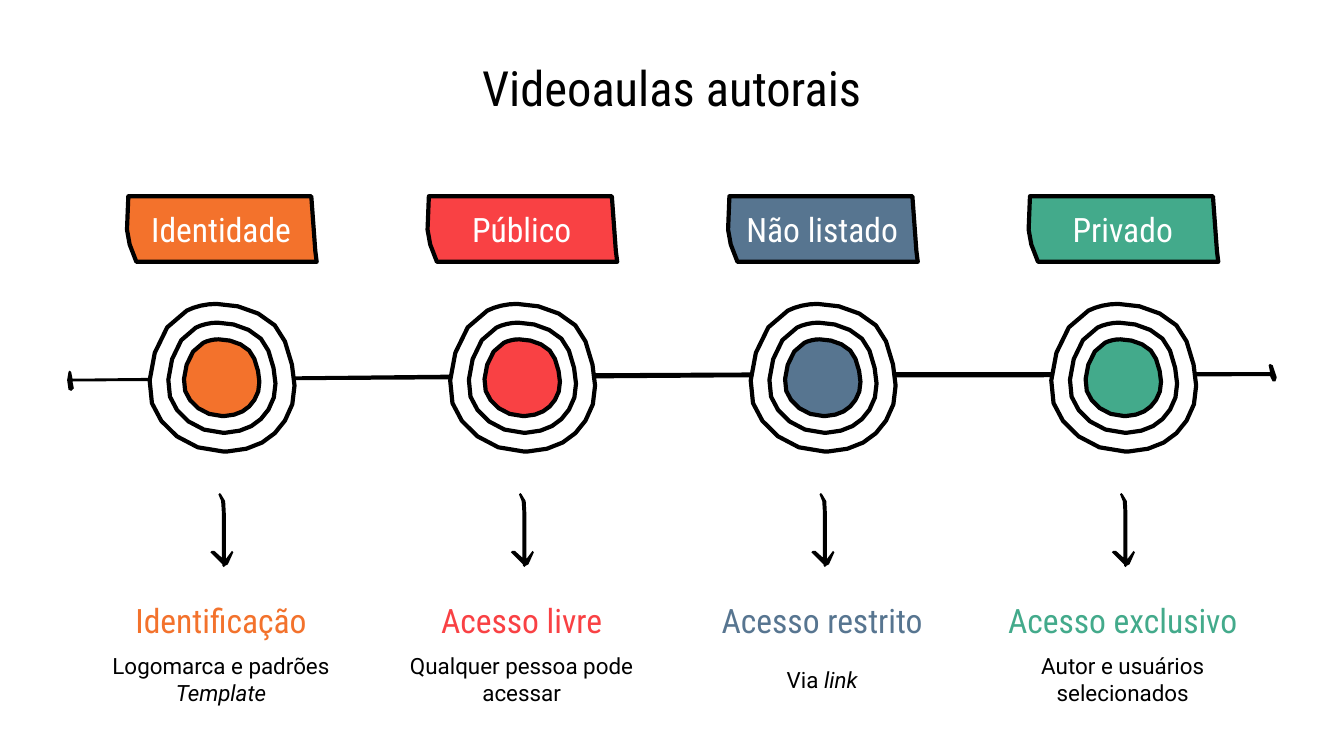
from dataclasses import dataclass
from typing import NamedTuple

import pptx
import pptx.dml.color
import pptx.enum.text
import pptx.shapes.shapetree
import pptx.util

Cm = pptx.util.Cm
RGB = pptx.dml.color.RGBColor.from_string
Anchor = pptx.enum.text.MSO_ANCHOR


@dataclass(frozen=True)
class Theme:
    black: str = "000000"
    white: str = "FFFFFF"
    orange: str = "F3722C"
    red: str = "F94144"
    blue: str = "577590"
    green: str = "43AA8B"
    heading_font: str = "Roboto Condensed"
    body_font: str = "Roboto"
    title_size: float = 26
    heading_size: float = 18
    body_size: float = 12
    line_width: float = 2.25


class Box(NamedTuple):
    """Position and size in centimetres."""
    left: float
    top: float
    width: float
    height: float


class Run(NamedTuple):
    text: str
    italic: bool = False


class Outline(NamedTuple):
    """Closed outline; a segment is a line (x, y) or a curve (two controls, end)."""
    width: float
    height: float
    start: tuple[float, float]
    segments: list[tuple[float, ...]]


@dataclass(frozen=True)
class Stage:
    label: str
    color: str
    heading: str
    body: list[list[Run]]


THEME = Theme()
SLIDE_W, SLIDE_H = 25.4, 14.29
FIRST_CENTER, PITCH = 4.18, 5.68
RING_MIDDLE = 7.14
RING_SIZES = [(2.92, 2.79), (2.16, 2.08), (1.52, 1.45)]
CURVE_STEPS = 4

RING = Outline(115, 110, (54, 0), [
    (46, 0, 38, 2, 32, 5), (9, 15, 0, 56, 6, 74), (12, 92, 32, 110, 59, 110),
    (62, 110), (83, 109, 96, 101, 105, 87), (115, 72, 114, 52, 105, 28),
    (99, 10, 75, 0, 54, 0)])
LABEL = Outline(142, 49, (2, 0), [
    (1, 25), (3, 36), (8, 49), (142, 49), (141, 41), (138, 0)])
ARROW = Outline(18, 55, (11, 55), [
    (12, 54), (14, 53), (18, 44), (17, 43), (12.5, 49), (12.5, 16), (12, 6), (9, 1),
    (8, 0), (7, 1), (9, 6), (9.5, 14), (9.5, 48), (4, 43), (2, 43), (1, 44),
    (10, 53), (10, 54)])
TIMELINE = Outline(900, 20, (895, 0), [
    (894, 1), (895, 6), (574, 6), (374, 7), (4, 11), (3, 6), (2, 5), (1, 6),
    (0, 12), (1, 19), (3, 20), (5, 18), (4, 13), (358, 11), (489, 10),
    (703, 10), (895, 9), (897, 13), (899, 13), (900, 10), (897, 1)])

STAGES = [
    Stage("Identidade", THEME.orange, "Identificação",
          [[Run("Logomarca e padrões")], [Run("Template", italic=True)]]),
    Stage("Público", THEME.red, "Acesso livre", [[Run("Qualquer pessoa pode acessar")]]),
    Stage("Não listado", THEME.blue, "Acesso restrito",
          [[Run("Via "), Run("link", italic=True)]]),
    Stage("Privado", THEME.green, "Acesso exclusivo",
          [[Run("Autor e usuários selecionados")]]),
]


def trace(outline: Outline) -> list[tuple[float, float]]:
    """Turn the segments into points, sampling each Bézier curve."""
    points = [outline.start]
    for segment in outline.segments:
        if len(segment) == 2:
            points.append(segment)
            continue
        x0, y0 = points[-1]
        x1, y1, x2, y2, x3, y3 = segment
        for step in range(1, CURVE_STEPS + 1):
            t = step / CURVE_STEPS
            a, b, c, d = (1 - t) ** 3, 3 * t * (1 - t) ** 2, 3 * t * t * (1 - t), t ** 3
            points.append((a * x0 + b * x1 + c * x2 + d * x3,
                           a * y0 + b * y1 + c * y2 + d * y3))
    return points


def draw_outline(shapes: pptx.shapes.shapetree.GroupShapes, outline: Outline, box: Box,
                 fill: str, lined: bool = True) -> None:
    points = [(Cm(box.left + x * box.width / outline.width),
               Cm(box.top + y * box.height / outline.height))
              for x, y in trace(outline)]
    builder = shapes.build_freeform(*points[0])
    builder.add_line_segments(points[1:], close=True)
    s = builder.convert_to_shape()
    s.shadow.inherit = False
    s.fill.solid()
    s.fill.fore_color.rgb = RGB(fill)
    if lined:
        s.line.color.rgb = RGB(THEME.black)
        s.line.width = pptx.util.Pt(THEME.line_width)
    else:
        s.line.fill.background()


def add_text(shapes: pptx.shapes.shapetree.GroupShapes, paragraphs: list[list[Run]],
             box: Box, *, size: float, font: str = THEME.heading_font,
             color: str = THEME.black, anchor: Anchor = Anchor.MIDDLE) -> None:
    tf = shapes.add_textbox(*map(Cm, box)).text_frame
    tf.word_wrap = True
    tf.vertical_anchor = anchor
    tf.margin_left = tf.margin_right = tf.margin_top = tf.margin_bottom = Cm(0.25)
    for i, runs in enumerate(paragraphs):
        p = tf.add_paragraph() if i else tf.paragraphs[0]
        p.alignment = pptx.enum.text.PP_ALIGN.CENTER
        for run in runs:
            r = p.add_run()
            r.text = run.text
            r.font.name = font
            r.font.size = pptx.util.Pt(size)
            r.font.color.rgb = RGB(color)
            if run.italic:
                r.font.italic = True


def centered(center: float, top: float, width: float, height: float) -> Box:
    return Box(center - width / 2, top, width, height)


def draw_stage(shapes: pptx.shapes.shapetree.GroupShapes, stage: Stage,
               center: float) -> None:
    fills = [THEME.white, THEME.white, stage.color]
    for (width, height), fill in zip(RING_SIZES, fills):
        draw_outline(shapes, RING,
                     centered(center, RING_MIDDLE - height / 2, width, height), fill)
    draw_outline(shapes, LABEL, centered(center, 3.71, 3.61, 1.24), stage.color)
    draw_outline(shapes, ARROW, centered(center, 9.32, 0.46, 1.4), THEME.black, lined=False)
    add_text(shapes, stage.body, centered(center, 12.04, 5.03, 1.6),
             size=THEME.body_size, font=THEME.body_font)
    add_text(shapes, [[Run(stage.heading)]], centered(center, 11.3, 5.03, 0.84),
             size=THEME.heading_size, color=stage.color)
    add_text(shapes, [[Run(stage.label)]], centered(center, 3.91, 3.61, 0.84),
             size=THEME.heading_size, color=THEME.white)


def main() -> None:
    prs = pptx.Presentation()
    prs.slide_width, prs.slide_height = Cm(SLIDE_W), Cm(SLIDE_H)
    slide = prs.slides.add_slide(prs.slide_layouts[6])
    draw_outline(slide.shapes, TIMELINE, centered(SLIDE_W / 2, 6.88, 22.86, 0.51),
                 THEME.black, lined=False)
    add_text(slide.shapes, [[Run("Videoaulas autorais")]],
             centered(SLIDE_W / 2, 0.84, 22.86, 1.6),
             size=THEME.title_size, anchor=Anchor.TOP)
    for i, stage in enumerate(STAGES):
        group = slide.shapes.add_group_shape()
        draw_stage(group.shapes, stage, FIRST_CENTER + i * PITCH)
    prs.save("out.pptx")


if __name__ == "__main__":
    main()
